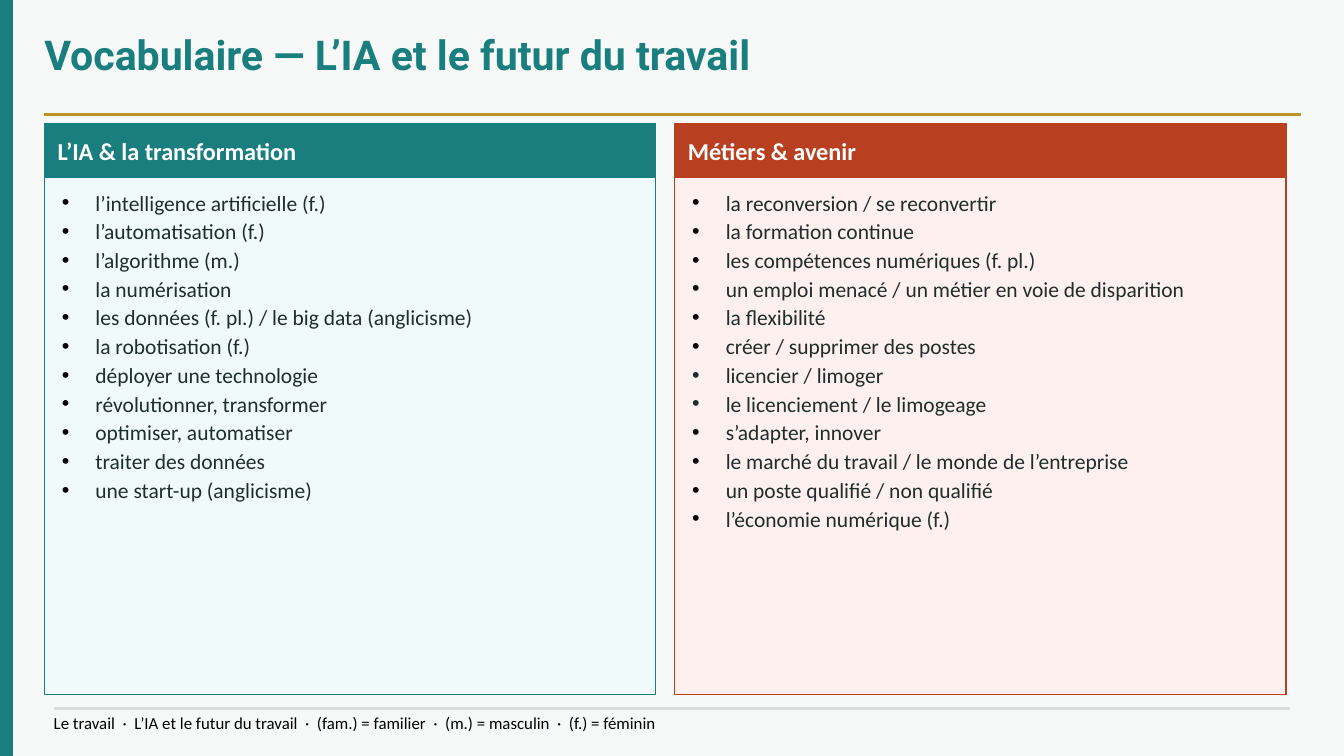
from lxml.etree import SubElement
from pptx import Presentation
from pptx.dml.color import RGBColor
from pptx.enum.shapes import MSO_CONNECTOR, MSO_SHAPE
from pptx.enum.text import MSO_ANCHOR, MSO_AUTO_SIZE, PP_ALIGN
from pptx.oxml.ns import qn
from pptx.util import Inches, Pt

TEAL, RUST, GOLD, GREY = "1A7E7E", "B84020", "B89620", "DDDDDD"
INK, BLACK, WHITE = "1E2D2D", "000000", "FFFFFF"
PAGE_W = 10
PAGE_H = PAGE_W * 9 / 16
LEFT, COLUMN_W, COLUMN_GAP = 0.33, 4.55, 0.14
HEADER_TOP, HEADER_H, LIST_H = 0.92, 0.4, 3.85

COLUMNS = [
    ("L’IA & la transformation", TEAL, "F0FAFA", [
        "l’intelligence artificielle (f.)",
        "l’automatisation (f.)",
        "l’algorithme (m.)",
        "la numérisation",
        "les données (f. pl.) / le big data (anglicisme)",
        "la robotisation (f.)",
        "déployer une technologie",
        "révolutionner, transformer",
        "optimiser, automatiser",
        "traiter des données",
        "une start-up (anglicisme)",
    ]),
    ("Métiers & avenir", RUST, "FDF0EE", [
        "la reconversion / se reconvertir",
        "la formation continue",
        "les compétences numériques (f. pl.)",
        "un emploi menacé / un métier en voie de disparition",
        "la flexibilité",
        "créer / supprimer des postes",
        "licencier / limoger",
        "le licenciement / le limogeage",
        "s’adapter, innover",
        "le marché du travail / le monde de l’entreprise",
        "un poste qualifié / non qualifié",
        "l’économie numérique (f.)",
    ]),
]
INK_BULLETS = {"licencier / limoger", "le licenciement / le limogeage"}


def rgb(hex_code):
    return RGBColor.from_string(hex_code)


class VocabularySlide:
    body_font, title_font = "Calibri", "Roboto"

    def __init__(self, slide):
        self.slide = slide

    def background(self, color):
        fill = self.slide.background.fill
        fill.solid()
        fill.fore_color.rgb = rgb(color)

    def place(self, shape, x, y, w, h):
        shape.left, shape.top = Inches(x), Inches(y)
        shape.width, shape.height = Inches(w), Inches(h)

    def paint(self, shape, fill, line):
        shape.fill.solid()
        shape.fill.fore_color.rgb = rgb(fill)
        shape.line.color.rgb = rgb(line)
        shape.line.width = Pt(0.75)

    def frame(self, shape, inset_x, inset_y, anchor=MSO_ANCHOR.TOP):
        frame = shape.text_frame
        frame.word_wrap = True
        frame.auto_size = MSO_AUTO_SIZE.NONE
        frame.vertical_anchor = anchor
        frame.margin_left = frame.margin_right = Inches(inset_x)
        frame.margin_top = frame.margin_bottom = Inches(inset_y)
        return frame

    def style(self, paragraph, size, color, bold=False, font=None):
        paragraph.alignment = PP_ALIGN.LEFT
        for run in paragraph.runs:
            run.font.name = font or self.body_font
            run.font.size = Pt(size)
            run.font.bold = bold
            run.font.color.rgb = rgb(color)

    def title(self, text, x, y, w, h):
        title = self.slide.shapes.title
        self.place(title, x, y, w, h)
        frame = self.frame(title, 0, 0)
        frame.text = text
        self.style(frame.paragraphs[0], 22, TEAL, True, self.title_font)

    def block(self, x, y, w, h, color):
        block = self.slide.shapes.add_shape(
            MSO_SHAPE.RECTANGLE, Inches(x), Inches(y), Inches(w), Inches(h))
        block.shadow.inherit = False
        self.paint(block, color, color)
        return block

    def header(self, text, x, y, w, h, color):
        frame = self.frame(self.block(x, y, w, h, color), 0.1, 0.1, MSO_ANCHOR.MIDDLE)
        frame.text = text
        self.style(frame.paragraphs[0], 13, WHITE, True)

    def bullet(self, paragraph, color):
        properties = paragraph._p.get_or_add_pPr()
        properties.set("marL", str(Inches(0.25)))
        properties.set("indent", str(Inches(-0.25)))
        bullet_color = SubElement(properties, qn("a:buClr"))
        SubElement(bullet_color, qn("a:srgbClr"), val=color)
        SubElement(properties, qn("a:buChar"), char="•")

    def word_list(self, placeholder, words, x, y, w, h, fill, line):
        self.place(placeholder, x, y, w, h)
        self.paint(placeholder, fill, line)
        frame = self.frame(placeholder, 0.13, 0.09)
        frame.text = "\n".join(words)
        for i, paragraph in enumerate(frame.paragraphs):
            self.bullet(paragraph, INK if paragraph.text in INK_BULLETS else BLACK)
            paragraph.space_before = Pt(1.6 if i else 0)
            self.style(paragraph, 11.5, INK)

    def rule(self, x1, x2, y, color):
        rule = self.slide.shapes.add_connector(
            MSO_CONNECTOR.STRAIGHT, Inches(x1), Inches(y), Inches(x2), Inches(y))
        rule.line.color.rgb = rgb(color)
        rule.line.width = Pt(1.5)
        SubElement(rule._element.spPr, qn("a:effectLst"))

    def footnote(self, text, x, y, w, h):
        note = self.slide.shapes.add_textbox(Inches(x), Inches(y), Inches(w), Inches(h))
        frame = self.frame(note, 0, 0)
        frame.text = text
        self.style(frame.paragraphs[0], 9, BLACK)


def main():
    deck = Presentation()
    deck.slide_width, deck.slide_height = Inches(PAGE_W), Inches(PAGE_H)
    two_content = deck.slide_layouts[3]
    page = VocabularySlide(deck.slides.add_slide(two_content))

    page.background("F7F9F9")
    page.block(0, 0, 0.09, PAGE_H, TEAL)
    page.title("Vocabulaire — L’IA et le futur du travail", LEFT, 0.22, 9.35, 0.55)
    page.rule(LEFT, 9.68, 0.85, GOLD)

    for i, (heading, accent, tint, words) in enumerate(COLUMNS):
        x = LEFT + i * (COLUMN_W + COLUMN_GAP)
        page.header(heading, x, HEADER_TOP, COLUMN_W, HEADER_H, accent)
        page.word_list(page.slide.placeholders[i + 1], words,
                       x, HEADER_TOP + HEADER_H, COLUMN_W, LIST_H, tint, accent)

    page.rule(0.4, 9.6, 5.27, GREY)
    page.footnote("Le travail  ·  L’IA et le futur du travail  ·  (fam.) = familier"
                  "  ·  (m.) = masculin  ·  (f.) = féminin", 0.4, 5.3, 9.2, 0.22)
    deck.save("out.pptx")


if __name__ == "__main__":
    main()
